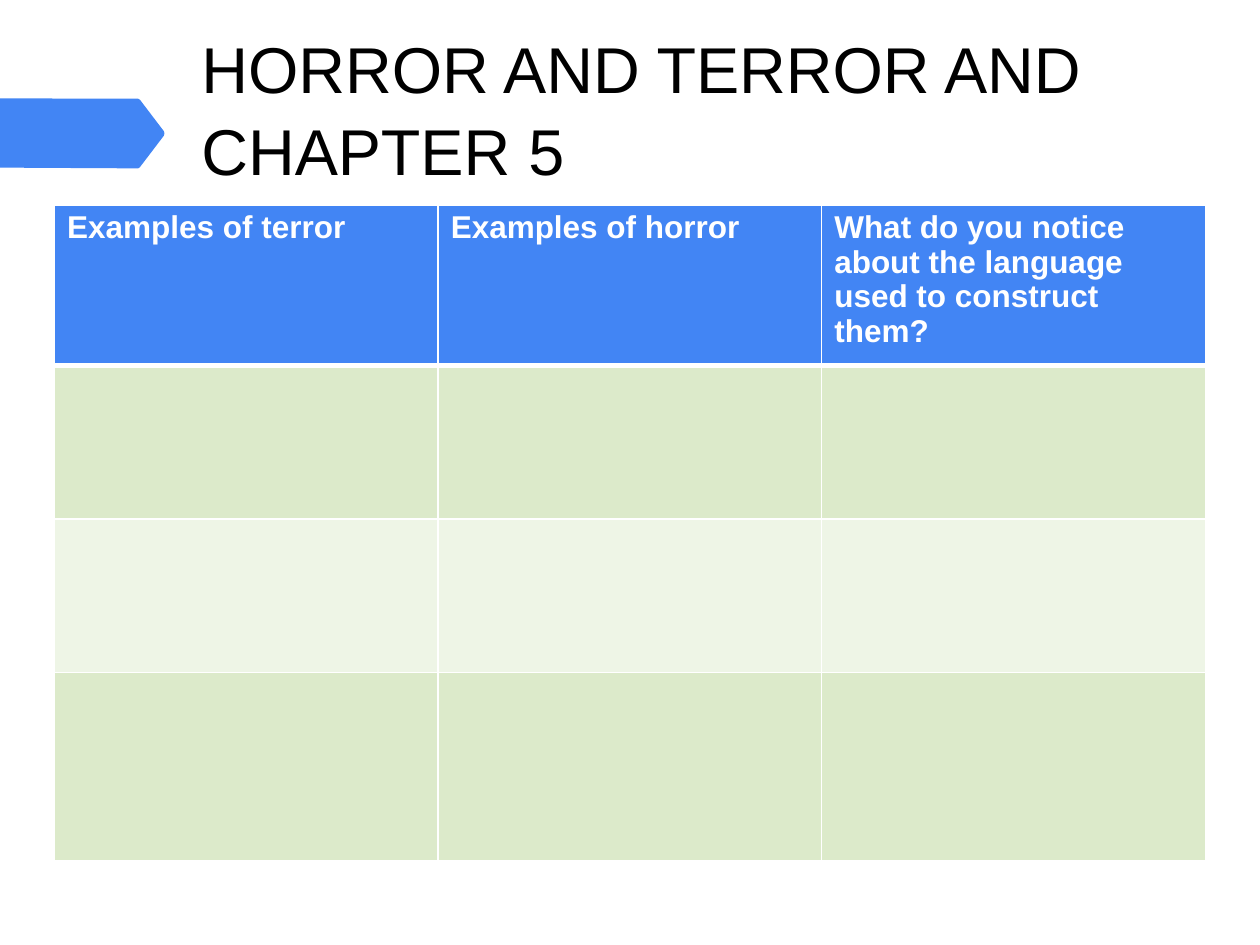
from lxml import etree
from pptx import Presentation
from pptx.dml import color
from pptx.enum import text
from pptx.oxml import ns
from pptx.util import Pt

BLUE, WHITE, BLACK = "4285F4", "FFFFFF", "000000"
BANDS = ["DCEACA", "EEF5E6"]


def rgb(value):
    return color.RGBColor.from_string(value)


class Deck:
    font = "Arial"
    margins = {"margin_left": Pt(7.2), "margin_right": Pt(7.2),
               "margin_top": Pt(3.6), "margin_bottom": Pt(3.6)}

    def __init__(self, width, height):
        self.prs = Presentation()
        self.prs.slide_width, self.prs.slide_height = Pt(width), Pt(height)
        self.s = self.prs.slides.add_slide(self.prs.slide_layouts[6])

    def add_words(self, tf, words, tint, spacing, **style):
        p = tf.paragraphs[0]
        p.alignment = text.PP_ALIGN.LEFT
        p.line_spacing = spacing
        r = p.add_run()
        r.text = words
        for name, value in {"name": self.font, **style}.items():
            setattr(r.font, name, value)
        r.font.color.rgb = rgb(tint)

    def outline(self, points, fill):
        start, *rest = [(Pt(x), Pt(y)) for x, y in points]
        builder = self.s.shapes.build_freeform(*start)
        builder.add_line_segments(rest, close=True)
        sp = builder.convert_to_shape()
        sp.shadow.inherit = False
        sp.fill.solid()
        sp.fill.fore_color.rgb = rgb(fill)
        sp.line.fill.background()

    def title(self, words, x, y, w, h):
        sp = self.s.shapes.add_textbox(Pt(x), Pt(y), Pt(w), Pt(h))
        tf = sp.text_frame
        layout = {"word_wrap": True, "vertical_anchor": text.MSO_ANCHOR.BOTTOM}
        for name, value in {**self.margins, **layout}.items():
            setattr(tf, name, value)
        self.add_words(tf, words, BLACK, 1.05, size=Pt(37))

    def border(self, cell, side, width):
        ln = etree.SubElement(cell._tc.get_or_add_tcPr(), ns.qn(f"a:ln{side}"),
                              w=str(Pt(width)))
        fill = etree.SubElement(ln, ns.qn("a:solidFill"))
        etree.SubElement(fill, ns.qn("a:srgbClr"), val=WHITE)

    def table(self, headings, x, y, col_width, heights):
        n = len(headings)
        tbl = self.s.shapes.add_table(len(heights), n, Pt(x), Pt(y),
                                      Pt(n * col_width), Pt(sum(heights))).table
        for col in tbl.columns:
            col.width = Pt(col_width)
        for i, height in enumerate(heights):
            tbl.rows[i].height = Pt(height)
            # A thick rule parts the header from the banded rows
            widths = {"L": 1, "R": 1, "T": 3 if i == 1 else 1, "B": 3 if i == 0 else 1}
            for j, heading in enumerate(headings):
                cell = tbl.cell(i, j)
                for name, value in self.margins.items():
                    setattr(cell, name, value)
                for side, width in widths.items():
                    self.border(cell, side, width)
                cell.fill.solid()
                cell.fill.fore_color.rgb = rgb(BANDS[(i - 1) % 2] if i else BLUE)
                if i == 0:
                    self.add_words(cell.text_frame, heading, WHITE, 0.98,
                                   size=Pt(18), bold=True)


def main():
    deck = Deck(720, 540)

    # Arrow tab at the left edge
    deck.outline([(0, 56.2), (79, 56.4), (80, 57), (93.7, 75), (94, 76.2),
                  (93.7, 77.5), (80, 95.5), (79, 96.2), (0, 95.8)], BLUE)

    # Title
    deck.title("HORROR AND TERROR AND CHAPTER 5", 108, 27.5, 545, 83.5)

    # Worksheet table
    deck.table(["Examples of terror", "Examples of horror",
                "What do you notice about the language used to construct them?"],
               31.2, 117, 219.2, [87.7, 87.7, 87.7, 107.5])

    deck.prs.save("out.pptx")


if __name__ == "__main__":
    main()
